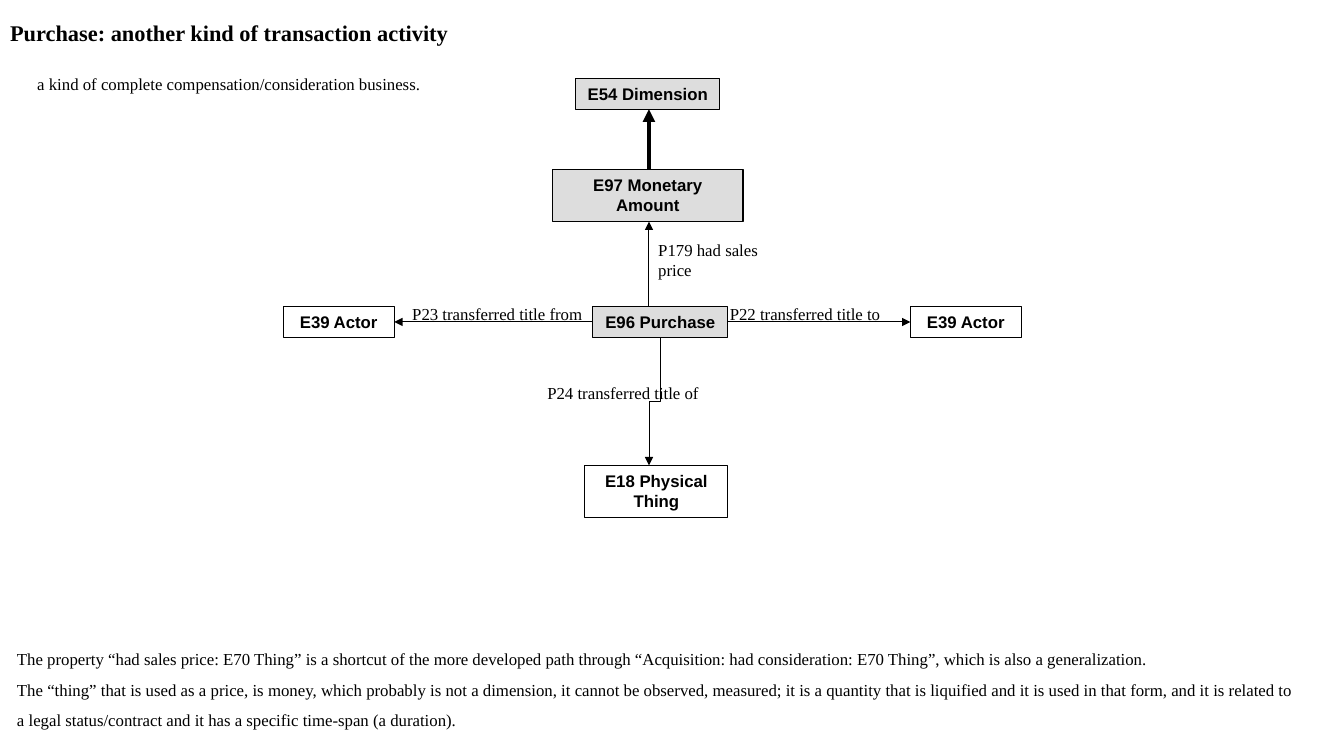
from dataclasses import dataclass

from lxml import etree
from pptx import Presentation
from pptx import util as u
from pptx.dml.color import RGBColor
from pptx.enum import shapes, text
from pptx.oxml.ns import qn

COLORS = {"ink": "000000", "shade": "DDDDDD"}
SERIF, SANS = "Times New Roman", "Arial"


@dataclass
class Box:
    """An area in inches; its sections are given in percent of its own size."""
    left: float
    top: float
    width: float
    height: float

    def point(self, x, y):
        return self.left + self.width * x / 100, self.top + self.height * y / 100

    def section(self, x, y, w, h):
        return Box(*self.point(x, y), self.width * w / 100, self.height * h / 100)

    def emu(self):
        return [u.Inches(v) for v in (self.left, self.top, self.width, self.height)]


SLIDE = Box(0, 0, 13.33, 7.5)

# name: (text, box in percent of the diagram, shaded)
ENTITIES = {
    "dimension": ("E54 Dimension", (39.62, 0, 19.54, 7), True),
    "money": ("E97 Monetary Amount", (36.48, 20.8, 25.82, 11.8), True),
    "seller": ("E39 Actor", (0, 52, 15.03, 7), False),
    "purchase": ("E96 Purchase", (41.94, 52, 18.31, 7), True),
    "buyer": ("E39 Actor", (84.97, 52, 15.03, 7), False),
    "thing": ("E18 Physical Thing", (40.85, 88.2, 19.4, 11.8), False),
}
PROPERTIES = [
    ("P179 had sales price", (49.45, 35.63, 19.4, 11.5)),
    ("P23 transferred title from", (16.12, 50.11, 31.15, 7)),
    ("P22 transferred title to", (59.15, 50.11, 23.63, 7)),
    ("P24 transferred title of", (34.43, 68.28, 24.73, 7)),
]
NOTES = [
    "The property “had sales price: E70 Thing” is a shortcut of the more developed path "
    "through “Acquisition: had consideration: E70 Thing”, which is also a generalization.",
    "The “thing” that is used as a price, is money, which probably is not a dimension, it "
    "cannot be observed, measured; it is a quantity that is liquified and it is used in that "
    "form, and it is related to a legal status/contract and it has a specific time-span "
    "(a duration).",
]


def color(name):
    return RGBColor.from_string(COLORS[name])


def write(frame, lines, font=SERIF, size=12, bold=False, align=text.PP_ALIGN.LEFT,
          anchor=text.MSO_ANCHOR.TOP, spacing=1.0):
    frame.word_wrap = True
    frame.vertical_anchor = anchor
    frame.text = "\n".join(lines)
    for line in frame.paragraphs:
        line.alignment, line.line_spacing = align, spacing
        line.font.name, line.font.size, line.font.bold = font, u.Pt(size), bold
        line.font.color.rgb = color("ink")


def add_text(slide, box, lines, **style):
    frame = slide.shapes.add_textbox(*box.emu()).text_frame
    write(frame, lines, **style)
    return frame


def add_entity(slide, box, label, shaded):
    entity = slide.shapes.add_shape(shapes.MSO_SHAPE.RECTANGLE, *box.emu())
    entity.shadow.inherit = False
    if shaded:
        entity.fill.solid()
        entity.fill.fore_color.rgb = color("shade")
    else:
        entity.fill.background()
    entity.line.color.rgb = color("ink")
    entity.line.width = u.Pt(0.75)
    write(entity.text_frame, [label], font=SANS, bold=True, align=text.PP_ALIGN.CENTER)


def add_arrow(slide, start, end, weight=0.75, kind=shapes.MSO_CONNECTOR.STRAIGHT):
    ends = [u.Inches(v) for v in (*start, *end)]
    arrow = slide.shapes.add_connector(kind, *ends)
    arrow.line.color.rgb = color("ink")
    arrow.line.width = u.Pt(weight)
    properties = arrow._element.spPr
    etree.SubElement(properties.find(qn("a:ln")), qn("a:tailEnd"), type="triangle")
    etree.SubElement(properties, qn("a:effectLst"))
    return arrow


def add_downward_elbow(slide, start, end):
    """Bends down, left, down: a level elbow turned a quarter about its centre."""
    (x1, y1), (x2, y2) = start, end
    mid_x, mid_y = (x1 + x2) / 2, (y1 + y2) / 2
    half_run, half_step = (y2 - y1) / 2, (x1 - x2) / 2
    elbow = add_arrow(slide, (mid_x - half_run, mid_y - half_step),
                      (mid_x + half_run, mid_y + half_step),
                      kind=shapes.MSO_CONNECTOR.ELBOW)
    elbow._element.spPr.find(qn("a:xfrm")).set("rot", str(90 * 60000))


def add_heading(slide, box):
    title = slide.shapes.title
    title.left, title.top, title.width, title.height = box.section(0, 0, 100, 80).emu()
    write(title.text_frame, ["Purchase: another kind of transaction activity"],
          size=16, bold=True)
    subtitle = add_text(slide, box.section(6.9, 77.6, 76, 26.3),
                        ["a kind of complete compensation/consideration business."],
                        anchor=text.MSO_ANCHOR.MIDDLE)
    subtitle.margin_left = subtitle.margin_right = 0
    subtitle.margin_top = subtitle.margin_bottom = 0


def add_diagram(slide, box):
    at = {name: box.section(*area) for name, (_, area, _) in ENTITIES.items()}
    for name, (label, _, shaded) in ENTITIES.items():
        add_entity(slide, at[name], label, shaded)

    purchase, money, thing = at["purchase"], at["money"], at["thing"]
    spine = box.point(49.55, 0)[0]
    add_arrow(slide, (spine, money.top), (spine, at["dimension"].point(0, 100)[1]), weight=3)
    add_arrow(slide, (spine, purchase.top), (spine, money.point(0, 100)[1]))
    add_arrow(slide, purchase.point(0, 50), at["seller"].point(100, 50))
    add_arrow(slide, purchase.point(100, 50), at["buyer"].point(0, 50))
    add_downward_elbow(slide, purchase.point(50, 100), (spine, thing.top))

    for label, area in PROPERTIES:
        add_text(slide, box.section(*area), [label])


def add_notes(slide, box):
    add_text(slide, box, NOTES, align=text.PP_ALIGN.JUSTIFY, spacing=1.5)


def main():
    deck = Presentation()
    deck.slide_width, deck.slide_height = u.Inches(SLIDE.width), u.Inches(SLIDE.height)
    slide = deck.slides.add_slide(deck.slide_layouts[5])
    add_heading(slide, SLIDE.section(0, 1.87, 40.14, 10.13))
    add_diagram(slide, SLIDE.section(21.08, 10.4, 54.91, 58))
    add_notes(slide, SLIDE.section(0.53, 83.87, 96.55, 13.47))
    deck.save("out.pptx")


if __name__ == "__main__":
    main()
